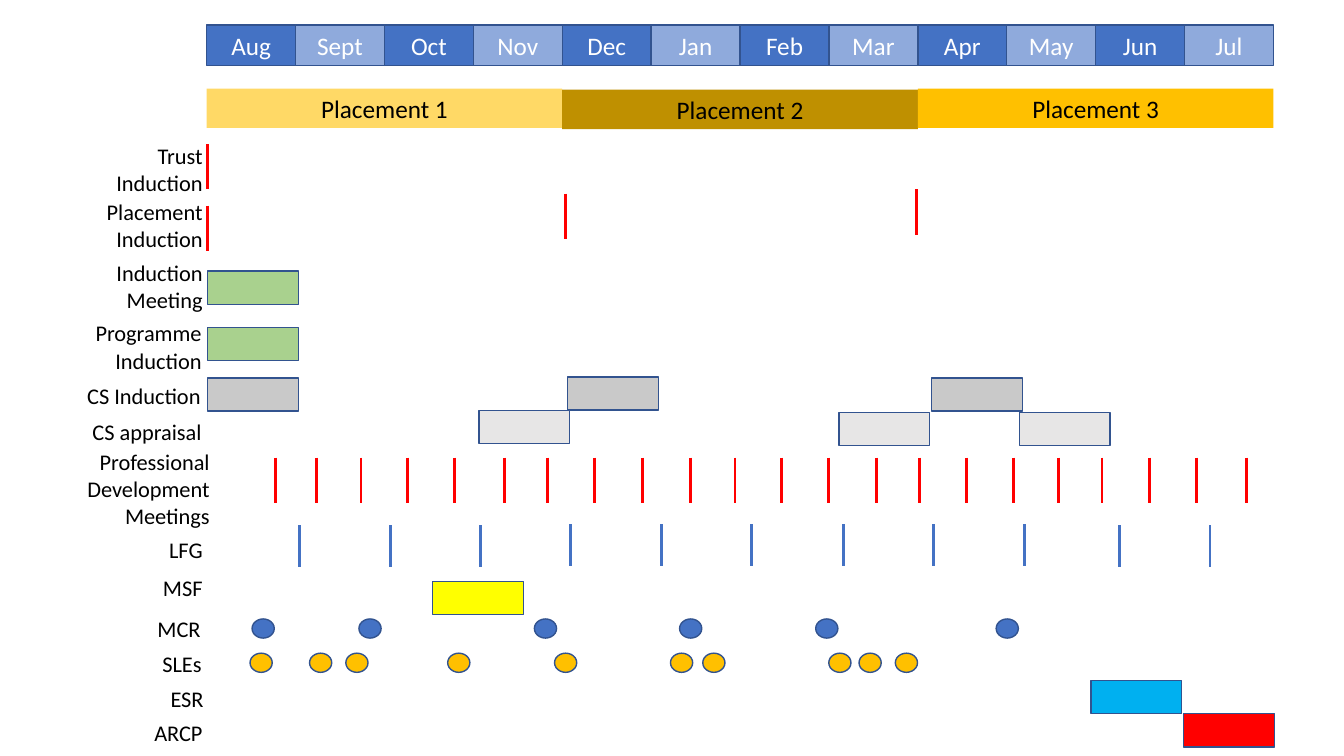
from pptx import Presentation
from pptx.dml.color import RGBColor
from pptx.enum.shapes import MSO_CONNECTOR, MSO_SHAPE
from pptx.enum.text import MSO_ANCHOR, MSO_AUTO_SIZE, PP_ALIGN
from pptx.oxml.ns import qn
from pptx.util import Pt
from lxml.etree import SubElement

THEME = {
    "font": "Calibri", "header": 18, "label": 16, "outline": 1, "tick": 2,
    "white": "FFFFFF", "black": "000000", "navy": "32538F",
    "blue": "4472C4", "pale blue": "8FAADC", "sky": "00B0F0",
    "pale gold": "FFD966", "dark gold": "BF9000", "gold": "FFC000",
    "green": "A9D18E", "grey": "C9C9C9", "pale grey": "E7E6E6",
    "yellow": "FFFF00", "red": "FF0000",
}

# Content: all lengths in px, 100 px to the inch
MONTHS = ["Aug", "Sept", "Oct", "Nov", "Dec", "Jan",
          "Feb", "Mar", "Apr", "May", "Jun", "Jul"]
PLACEMENTS = [("Placement 1", 88, "pale gold"),
              ("Placement 2", 89, "dark gold"),
              ("Placement 3", 88, "gold")]

# runs, left, top, width, height, wraps
LABELS = [
    (["Trust Induction"], 82, 136, 124, 63, True),
    (["Placement Induction"], 48, 192, 158, 63, True),
    (["Induction Meeting"], 82, 252, 124, 63, True),
    (["Programme", " ", "Induction"], 39, 309, 166, 66, True),
    (["CS Induction"], 69, 374, 135, 36, False),
    (["CS appraisal"], 73, 410, 132, 36, False),
    (["Professional Development Meetings"], 13, 440, 200, 89, True),
    (["LFG"], 157, 527, 49, 36, False),
    (["MSF"], 156, 565, 50, 36, False),
    (["MCR"], 151, 605, 53, 36, False),
    (["SLEs"], 116, 640, 89, 36, True),
    (["ESR"], 160, 675, 47, 36, False),
    (["ARCP"], 143, 709, 63, 36, False),
]

# colour, (left, top) of each period
PERIODS = [
    ("green", [(206, 269), (206, 325)]),
    ("grey", [(206, 375), (563, 374), (924, 375)]),
    ("pale grey", [(475, 407), (832, 409), (1011, 409)]),
    ("yellow", [(429, 577)]),
    ("sky", [(1082, 675)]),
    ("red", [(1174, 708)]),
]

# colour, top, height, x of each event
TICKS = [
    ("red", 143, 45, [206]),
    ("red", 204, 45, [206]),
    ("red", 192, 45, [561]),
    ("red", 188, 45, [909]),
    ("red", 454, 45, [273, 314, 358, 404, 451, 500, 543, 590, 637, 685, 729,
                      775, 822, 869, 912, 959, 1005, 1050, 1093, 1140, 1187, 1236]),
    ("blue", 521, 42, [297, 387, 477, 1110, 1200]),
    ("blue", 520, 42, [566, 656, 745, 837, 926, 1016]),
]

# colour, top, left of each assessment
DOTS = [
    ("blue", 614, [250, 356, 530, 674, 809, 988]),
    ("gold", 648, [248, 307, 343, 444, 550, 665, 697, 822, 852, 888]),
]

# Geometry
PX = 9144
SLIDE_W, SLIDE_H = 1333, 750
YEAR_LEFT, YEAR_W = 205, 1058
HEADER_TOP, HEADER_H, PLACEMENT_H = 25, 40, 39
PERIOD_W, PERIOD_H = 90, 33
DOT_W, DOT_H = 22, 19
INSET = 5


def emu(*lengths):
    return [round(length * PX) for length in lengths]


def color(name):
    return RGBColor.from_string(THEME[name])


def write(frame, runs, size, ink, align, wraps=True):
    frame.word_wrap = wraps
    inset = INSET * PX
    frame.margin_left = frame.margin_right = inset
    frame.margin_top = frame.margin_bottom = inset
    paragraph = frame.paragraphs[0]
    paragraph.alignment = align
    for words in runs:
        run = paragraph.add_run()
        run.text = words
        run.font.name = THEME["font"]
        run.font.size = Pt(THEME[size] if words.strip() else THEME["header"])
        run.font.color.rgb = color(ink)


def add_block(kind, box, fill, outlined=True):
    block = slide.shapes.add_shape(kind, *emu(*box))
    block.shadow.inherit = False
    block.fill.solid()
    block.fill.fore_color.rgb = color(fill)
    if outlined:
        block.line.color.rgb = color("navy")
        block.line.width = Pt(THEME["outline"])
    else:
        block.line.fill.background()
    return block


def add_tick(x, top, height, stroke):
    tick = slide.shapes.add_connector(
        MSO_CONNECTOR.STRAIGHT, *emu(x, top, x, top + height))
    tick.line.color.rgb = color(stroke)
    tick.line.width = Pt(THEME["tick"])
    SubElement(tick._element.spPr, qn("a:effectLst"))


deck = Presentation()
deck.slide_width, deck.slide_height = emu(SLIDE_W, SLIDE_H)
slide = deck.slides.add_slide(deck.slide_layouts[6])

# Month header
month_w = YEAR_W / len(MONTHS)
for i, month in enumerate(MONTHS):
    cell = add_block(MSO_SHAPE.RECTANGLE,
                     (YEAR_LEFT + i * month_w, HEADER_TOP, month_w, HEADER_H),
                     ("blue", "pale blue")[i % 2])
    cell.text_frame.vertical_anchor = MSO_ANCHOR.MIDDLE
    write(cell.text_frame, [month], "header", "white", PP_ALIGN.CENTER)

# Placement bars
placement_w = YEAR_W / len(PLACEMENTS)
for i, (placement, top, fill) in enumerate(PLACEMENTS):
    bar = add_block(MSO_SHAPE.RECTANGLE,
                    (YEAR_LEFT + i * placement_w, top, placement_w, PLACEMENT_H),
                    fill, outlined=False)
    bar.text_frame.vertical_anchor = MSO_ANCHOR.TOP
    write(bar.text_frame, [placement], "header", "black", PP_ALIGN.CENTER)

# Row labels
for runs, left, top, width, height, wraps in LABELS:
    label = slide.shapes.add_textbox(*emu(left, top, width, height))
    write(label.text_frame, runs, "label", "black", PP_ALIGN.RIGHT, wraps)
    label.text_frame.auto_size = MSO_AUTO_SIZE.SHAPE_TO_FIT_TEXT

# Periods, single events and assessments
for fill, corners in PERIODS:
    for left, top in corners:
        add_block(MSO_SHAPE.RECTANGLE, (left, top, PERIOD_W, PERIOD_H), fill)

for stroke, top, height, events in TICKS:
    for x in events:
        add_tick(x, top, height, stroke)

for fill, top, lefts in DOTS:
    for left in lefts:
        add_block(MSO_SHAPE.OVAL, (left, top, DOT_W, DOT_H), fill)

deck.save("out.pptx")
